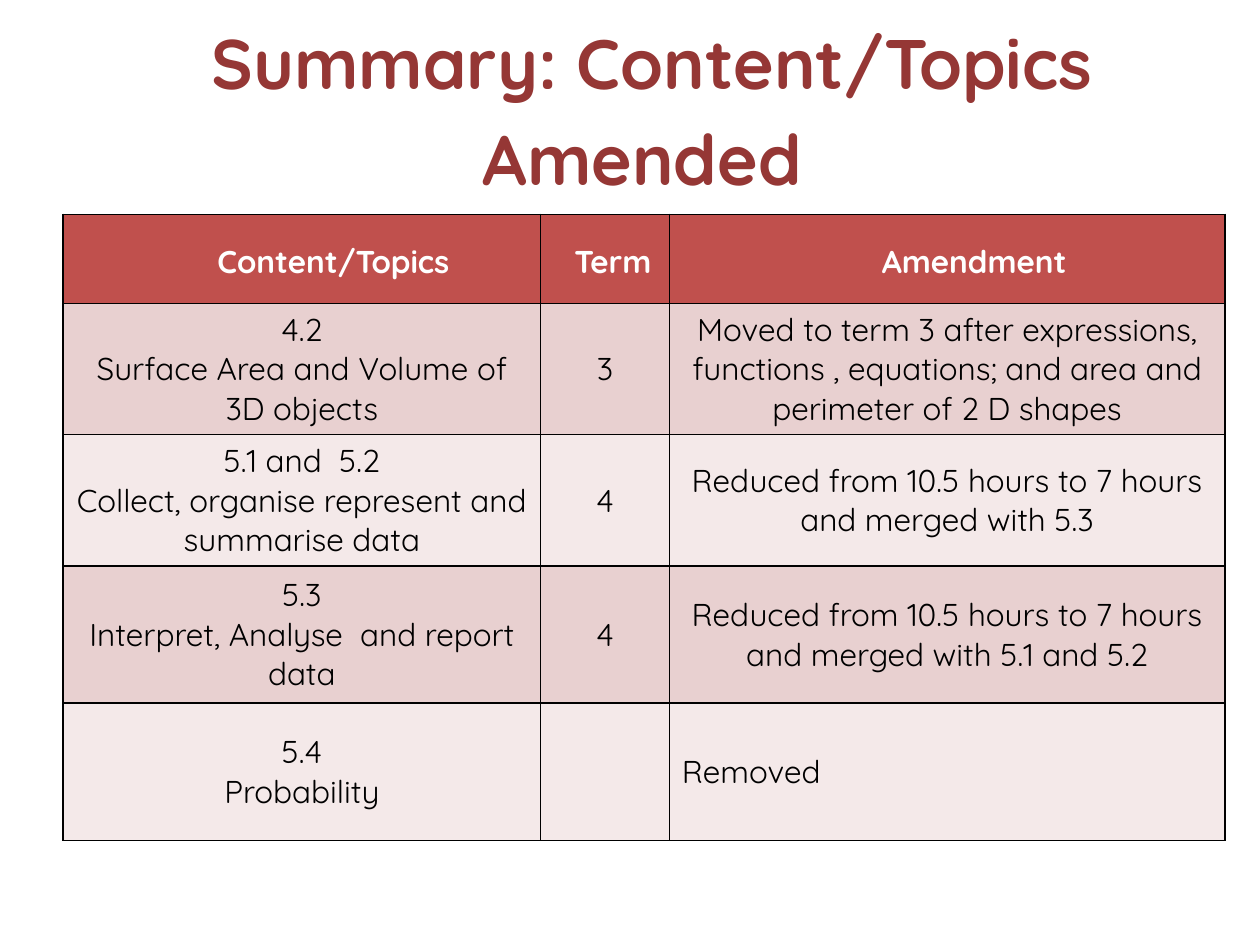
from lxml import etree
from pptx import Presentation
from pptx.dml import color
from pptx.enum import text
from pptx.oxml import ns
from pptx.util import Pt

HEADINGS = ["Content/Topics", "Term", "Amendment "]
TOPICS = [
    ["4.2\nSurface Area and Volume of 3D objects", "3",
     "Moved to term 3 after expressions, functions , equations; and area and perimeter of 2 D shapes"],
    ["5.1 and  5.2\nCollect, organise represent and summarise data", "4",
     "Reduced from 10.5 hours to 7 hours and merged with 5.3"],
    ["5.3\nInterpret, Analyse  and report data", "4",
     "Reduced from 10.5 hours to 7 hours and merged with 5.1 and 5.2"],
    ["5.4\nProbability", "", "Removed"],
]
COLUMN_WIDTHS = [273, 73.5, 317.5]
ROW_HEIGHTS = [51, 60, 62.5, 78.5, 78.5]
HEADING_INDENTS = [(36, 0), (13.5, -4.5), (36, 0)]


def rgb(value):
    """Return the colour for a hex string."""
    return color.RGBColor.from_string(value)


class SummarySlide:
    """Holds the style and the current slide."""

    font = "Quicksand"
    title_color, header_fill = "953735", "C0504D"
    band_fills = ["E8D0D0", "F4E9E9"]
    border_color = "000000"

    def __init__(self, page):
        """Keep the slide to draw on."""
        self.page = page

    def format_text(self, frame, size, ink, bold=False, align=text.PP_ALIGN.CENTER):
        """Format every paragraph and run of a text frame."""
        for para in frame.paragraphs:
            para.alignment = align
            for span in para.runs:
                span.font.name, span.font.size = self.font, Pt(size)
                span.font.bold = bold
                span.font.color.rgb = rgb(ink)

    def space_heading(self, para, left, first, before):
        """Set the indents and spacing of a heading paragraph."""
        para.line_spacing = 1.15
        para.space_before, para.space_after = Pt(before), Pt(6)
        properties = para._p.get_or_add_pPr()
        properties.set("marL", str(Pt(left)))
        properties.set("indent", str(Pt(first)))

    def title(self, wording, left, top, width, height):
        """Place and format the title placeholder."""
        box = self.page.shapes.title
        box.left, box.top, box.width, box.height = map(Pt, (left, top, width, height))
        frame = box.text_frame
        frame.text = wording
        frame.word_wrap = True
        frame.auto_size = text.MSO_AUTO_SIZE.NONE
        frame.vertical_anchor = text.MSO_ANCHOR.MIDDLE
        self.format_text(frame, 40, self.title_color, bold=True)
        self.space_heading(frame.paragraphs[0], 36, 0, 0)

    def border(self, cell):
        """Draw a thin line on all four sides of a cell."""
        properties = cell._tc.get_or_add_tcPr()
        for side in ("lnL", "lnR", "lnT", "lnB"):
            line = etree.SubElement(properties, ns.qn(f"a:{side}"), w=str(Pt(1)))
            fill = etree.SubElement(line, ns.qn("a:solidFill"))
            etree.SubElement(fill, ns.qn("a:srgbClr"), val=self.border_color)

    def cell(self, cell, wording, fill):
        """Fill a cell with text, borders and colour."""
        cell.text_frame.text = wording
        cell.vertical_anchor = text.MSO_ANCHOR.MIDDLE
        self.border(cell)
        cell.fill.solid()
        cell.fill.fore_color.rgb = rgb(fill)

    def header_cell(self, cell, wording, indents):
        """Write one heading of the table."""
        self.cell(cell, wording, self.header_fill)
        cell.margin_left = cell.margin_right = Pt(5)
        cell.margin_top = cell.margin_bottom = Pt(0)
        self.format_text(cell.text_frame, 18, "FFFFFF", bold=True)
        self.space_heading(cell.text_frame.paragraphs[0], *indents, 6)

    def table(self, left, top):
        """Add the table of amended topics."""
        table = self.page.shapes.add_table(
            len(ROW_HEIGHTS), len(COLUMN_WIDTHS), Pt(left), Pt(top),
            Pt(sum(COLUMN_WIDTHS)), Pt(sum(ROW_HEIGHTS))).table
        for column, width in zip(table.columns, COLUMN_WIDTHS):
            column.width = Pt(width)
        for row, height in zip(table.rows, ROW_HEIGHTS):
            row.height = Pt(height)
        for column, heading in enumerate(HEADINGS):
            self.header_cell(table.cell(0, column), heading, HEADING_INDENTS[column])
        for row, topic in enumerate(TOPICS, 1):
            for column, wording in enumerate(topic):
                cell = table.cell(row, column)
                self.cell(cell, wording, self.band_fills[(row - 1) % 2])
                align = text.PP_ALIGN.LEFT if wording == "Removed" else text.PP_ALIGN.CENTER
                self.format_text(cell.text_frame, 18, "000000", align=align)


def main():
    """Build the deck and save it."""
    deck = Presentation()
    deck.slide_width, deck.slide_height = Pt(720), Pt(540)
    slide = SummarySlide(deck.slides.add_slide(deck.slide_layouts[5]))
    slide.title("Summary: Content/Topics Amended ", 25, 9.5, 659, 99)
    slide.table(36, 122.5)
    deck.save("out.pptx")


if __name__ == "__main__":
    main()
